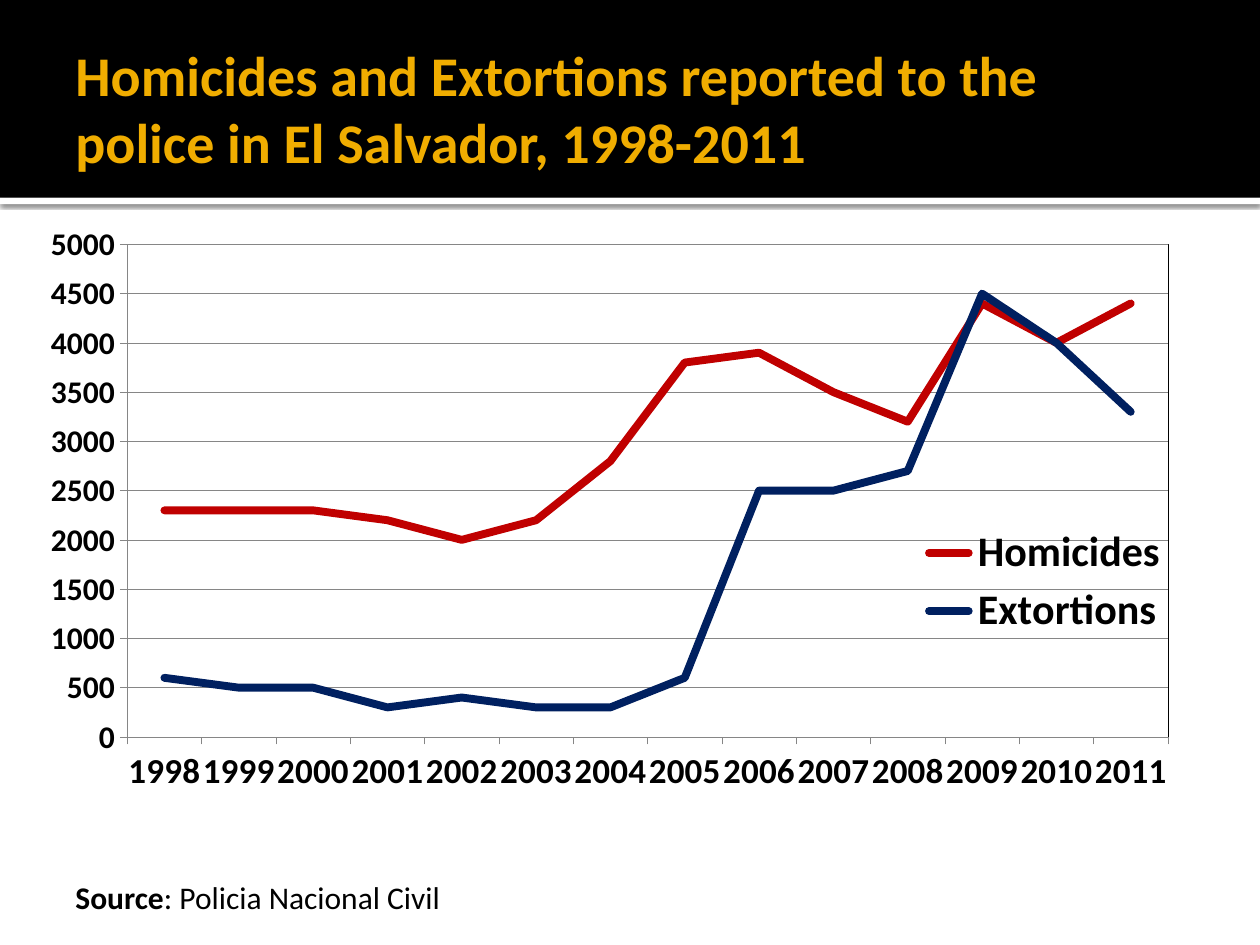
"""Builds a slide with a line chart of homicides and extortions in El Salvador."""
from lxml import etree
from pptx import Presentation
from pptx import util as u
from pptx.chart import data as chart_data
from pptx.dml import color
from pptx.enum import chart as charts, shapes, text
from pptx.oxml import parse_xml
from pptx.oxml import ns

PX = 9144
FONT = "Calibri"
TITLE = "Homicides and Extortions reported to the police in El Salvador, 1998-2011"
SOURCE = [("Source", True), (": Policia Nacional Civil", False)]
BANDS = [("FFFFFF", (0, 157, 1000, 5)), ("000000", (0, 0, 1000, 157))]
YEARS = range(1998, 2012)
SERIES = [
    ("Homicides", "C00000", [2300, 2300, 2300, 2200, 2000, 2200, 2800,
                             3800, 3900, 3500, 3200, 4400, 4000, 4400]),
    ("Extortions", "002060", [600, 500, 500, 300, 400, 300, 300,
                              600, 2500, 2500, 2700, 4500, 4000, 3300]),
]
CHART_BOX = (17, 167, 950, 517)
PLOT_BOX = (84, 27, 826, 391)
LEGEND_BOX = (712, 246, 200, 98)


def rgb(value):
    return color.RGBColor.from_string(value)


def place(*lengths):
    return [length * PX for length in lengths]


def style(font, size, bold=False, shade="000000"):
    font.name, font.size, font.bold = FONT, u.Pt(size), bold
    font.color.rgb = rgb(shade)


def thin_line(line, shade):
    line.color.rgb = rgb(shade)
    line.width = u.Pt(0.25)


def add_band(page, fill, box):
    band = page.shapes.add_shape(shapes.MSO_SHAPE.RECTANGLE, *place(*box))
    band.shadow.inherit = False
    band.fill.solid()
    band.fill.fore_color.rgb = rgb(fill)
    band.line.fill.background()
    return band


def add_shadow(shape):
    effects = shape._element.spPr.find(ns.qn("a:effectLst"))
    shadow = etree.SubElement(effects, ns.qn("a:outerShdw"), blurRad=str(u.Pt(2.5)),
                              dist=str(u.Pt(0.8)), dir="5400000", algn="t", rotWithShape="0")
    shade = etree.SubElement(shadow, ns.qn("a:srgbClr"), val="000000")
    etree.SubElement(shade, ns.qn("a:alpha"), val="60000")


def set_layout(parent, index, box, inner=False):
    """Gives a chart part a fixed place, measured in px inside the chart."""
    for old in parent.findall(ns.qn("c:layout")):
        parent.remove(old)
    target = '<c:layoutTarget val="inner"/>' if inner else ""
    modes = "".join(f'<c:{side}Mode val="edge"/>' for side in "xy")
    sizes = "".join(f'<c:{side} val="{length / whole:.4f}"/>'
                    for side, length, whole in zip("xywh", box, CHART_BOX[2:] * 2))
    parent.insert(index, parse_xml(
        f'<c:layout {ns.nsdecls("c")}><c:manualLayout>{target}{modes}{sizes}'
        '</c:manualLayout></c:layout>'))


def add_line_chart(page):
    table = chart_data.CategoryChartData()
    table.categories = [str(year) for year in YEARS]
    for name, _, values in SERIES:
        table.add_series(name, values)
    chart = page.shapes.add_chart(charts.XL_CHART_TYPE.LINE, *place(*CHART_BOX), table).chart
    chart.has_title = False
    style(chart.font, 10)
    for series, (_, shade, _) in zip(chart.plots[0].series, SERIES):
        series.smooth = False
        series.marker.style = charts.XL_MARKER_STYLE.NONE
        line = series.format.line
        line.color.rgb, line.width = rgb(shade), u.Pt(4.5)
        series._element.find(".//" + ns.qn("a:ln")).set("cap", "rnd")

    for axis, size in ((chart.category_axis, 20), (chart.value_axis, 18)):
        axis.major_tick_mark = charts.XL_TICK_MARK.OUTSIDE
        style(axis.tick_labels.font, size, True)
        thin_line(axis.format.line, "868686")
    scale = chart.value_axis
    scale.minimum_scale, scale.maximum_scale, scale.major_unit = 0, 5000, 500
    scale.has_major_gridlines = True
    thin_line(scale.major_gridlines.format.line, "868686")

    chart.has_legend = True
    legend = chart.legend
    legend.position = charts.XL_LEGEND_POSITION.RIGHT
    legend.include_in_layout = True
    style(legend.font, 24, True)
    set_layout(legend._element, 1, LEGEND_BOX)
    plot_area = chart.plots[0]._element.getparent()
    set_layout(plot_area, 0, PLOT_BOX, inner=True)
    plot_area.append(parse_xml(
        f'<c:spPr {ns.nsdecls("c", "a")}><a:noFill/><a:ln w="3175"><a:solidFill>'
        '<a:srgbClr val="000000"/></a:solidFill></a:ln></c:spPr>'))


def add_title(page):
    frame = page.shapes.add_textbox(*place(50, 17, 900, 137)).text_frame
    frame.word_wrap = True
    frame.vertical_anchor = text.MSO_ANCHOR.MIDDLE
    frame.margin_right = u.Inches(0.2)
    para = frame.paragraphs[0]
    para.text = TITLE
    style(para.font, 32, True, "F0AD00")


def add_source(page):
    frame = page.shapes.add_textbox(*place(50, 692, 325, 40)).text_frame
    frame.word_wrap = False
    frame.auto_size = text.MSO_AUTO_SIZE.SHAPE_TO_FIT_TEXT
    for words, bold in SOURCE:
        span = frame.paragraphs[0].add_run()
        span.text = words
        style(span.font, 18, bold)


def main():
    deck = Presentation()
    deck.slide_width, deck.slide_height = place(1000, 750)
    page = deck.slides.add_slide(deck.slide_layouts[6])
    rule, _ = [add_band(page, fill, box) for fill, box in BANDS]
    add_shadow(rule)
    add_title(page)
    add_line_chart(page)
    add_source(page)
    deck.save("out.pptx")


if __name__ == "__main__":
    main()
